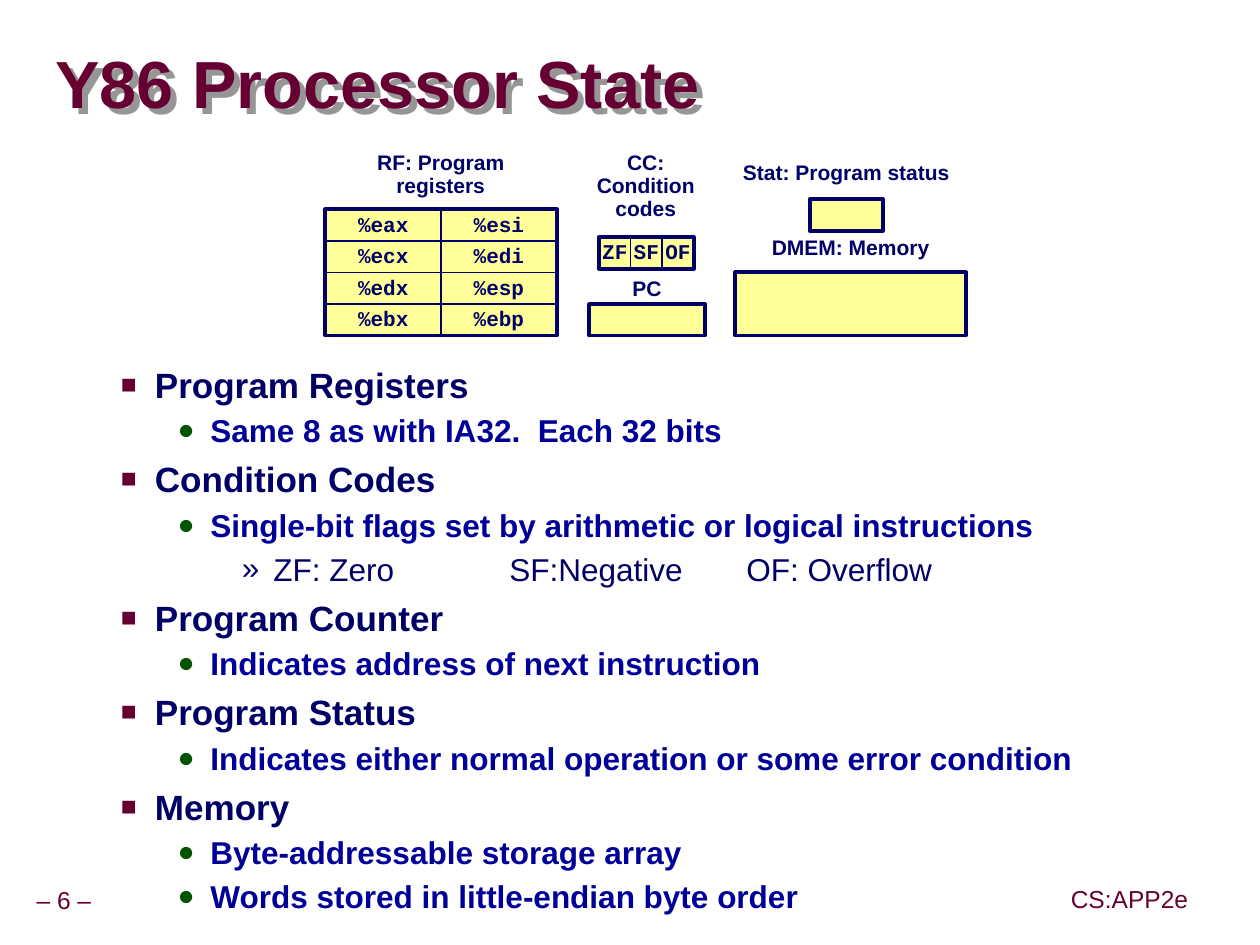
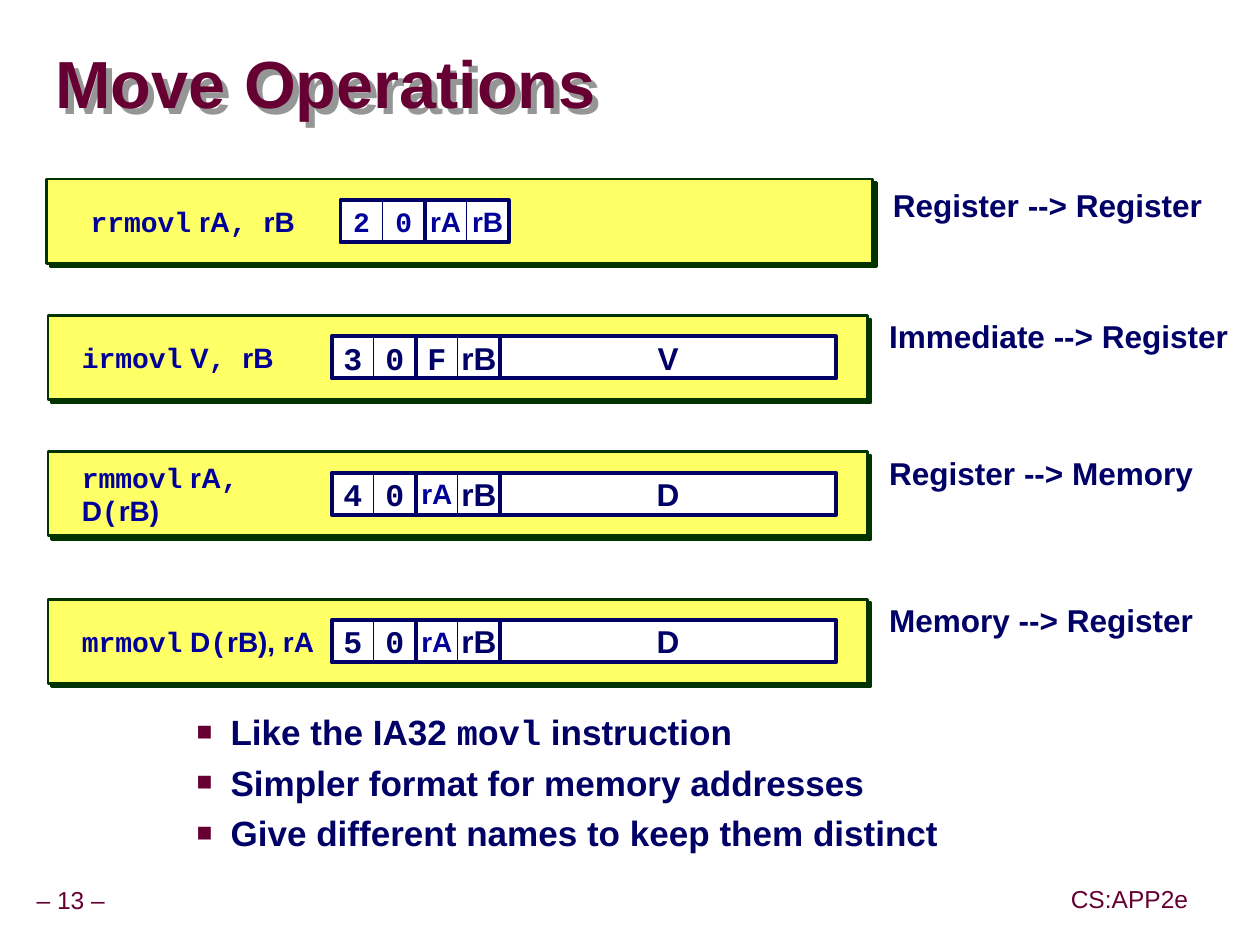
import pptx
import pptx.util
import pptx.dml.color
import pptx.enum.shapes
import pptx.enum.text
import pptx.oxml
import pptx.oxml.ns

Inches, Pt = pptx.util.Inches, pptx.util.Pt
ALIGN, ANCHOR = pptx.enum.text.PP_ALIGN, pptx.enum.text.MSO_ANCHOR

COLORS = {
    "maroon": "660033", "navy": "000066", "blue": "000099", "green": "005400",
    "dark_green": "003300", "pale_yellow": "FFFF99", "yellow": "FFFF66",
    "white": "FFFFFF", "gray": "969696",
}
SANS, MONO = "Arial", "Courier New"
WIDTH, HEIGHT = 9.99, 7.49
FOOTER = "CS:APP2e"

# Size, colour, bold, indent, hanging, line spacing, space before (%), bullet, bullet colour, bullet size (%)
LEVELS = {
    1: (20, "navy", True, 0.81, 0.27, None, 25, "■", "maroon", 75),
    2: (18, "blue", True, 1.25, 0.26, 1.07, 10, "●", "green", 90),
    3: (18, "navy", False, 1.75, 0.25, None, 20, "»", "navy", 100),
}

STATE_TITLE = "Y86 Processor State"
STATE_BULLETS = [
    (1, "Program Registers"),
    (2, "Same 8 as with IA32.  Each 32 bits"),
    (1, "Condition Codes"),
    (2, "Single-bit flags set by arithmetic or logical instructions"),
    (3, "ZF: Zero\tSF:Negative\t\tOF: Overflow"),
    (1, "Program Counter"),
    (2, "Indicates address of next instruction"),
    (1, "Program Status"),
    (2, "Indicates either normal operation or some error condition"),
    (1, "Memory"),
    (2, "Byte-addressable storage array"),
    (2, "Words stored in little-endian byte order"),
]
STATE_TABS = (3.62, 5.06)
REGISTERS = [("%eax", "%esi"), ("%ecx", "%edi"), ("%edx", "%esp"), ("%ebx", "%ebp")]
FLAGS = [("ZF", "SF", "OF")]
STATE_LABELS = [
    ("RF: Program registers", (2.58, 1.16, 1.83, 0.5)),
    ("CC: Condition codes", (4.58, 1.16, 1.08, 0.65)),
    ("PC", (4.67, 2.16, 0.92, 0.3)),
    ("DMEM: Memory", (5.83, 1.83, 1.83, 0.3)),
    ("Stat: Program status", (5.67, 1.24, 2.08, 0.3)),
]
STORAGE_BOXES = [(4.67, 2.41, 0.92, 0.25), (5.83, 2.16, 1.83, 0.5), (6.42, 1.58, 0.58, 0.25)]

MOVE_TITLE = "Move Operations"
MOVE_BULLETS = [
    (1, [("Like the IA32 ", SANS), ("movl", MONO), (" instruction", SANS)]),
    (1, "Simpler format for memory addresses"),
    (1, "Give different names to keep them distinct"),
]
# Top, instruction runs, byte fields, constant, caption
MOVES = [
    (1.42, [("rrmovl", MONO), (" rA", SANS), (", ", MONO), ("rB", SANS)],
     ("2", "0", "rA", "rB"), None, "Register --> Register"),
    (2.5, [("irmovl", MONO), (" V", SANS), (", ", MONO), ("rB", SANS)],
     ("3", "0", "F", "rB"), "V", "Immediate --> Register"),
    (3.58, [("rmmovl", MONO), (" rA", SANS), (",", MONO), (" D", SANS), ("(", MONO), ("rB)", SANS)],
     ("4", "0", "rA", "rB"), "D", "Register --> Memory"),
    (4.75, [("mrmovl", MONO), (" D", SANS), ("(", MONO), ("rB), rA", SANS)],
     ("5", "0", "rA", "rB"), "D", "Memory --> Register"),
]
FIELD = 1 / 3


def rgb(name):
    return pptx.dml.color.RGBColor.from_string(COLORS[name])


def add_element(parent, xml):
    namespace = pptx.oxml.ns.nsdecls("a")
    parent.append(pptx.oxml.parse_xml(xml.replace(" ", f" {namespace} ", 1)))


def add_runs(paragraph, content, size, color, bold=True, font=SANS):
    """Content is a string, or a list of (text, font) pairs."""
    for text, face in [(content, font)] if isinstance(content, str) else content:
        run = paragraph.add_run()
        run.text = text
        run.font.name, run.font.size, run.font.bold = face, Pt(size), bold
        run.font.color.rgb = rgb(color)


def prepare_frame(shape, anchor, wrap, inset):
    frame = shape.text_frame
    frame.word_wrap, frame.vertical_anchor = wrap, anchor
    frame.margin_left = frame.margin_right = Inches(inset[0])
    frame.margin_top = frame.margin_bottom = Inches(inset[1])
    return frame


def write_line(shape, content, size, color, bold=True, font=SANS, align=ALIGN.LEFT,
               anchor=ANCHOR.MIDDLE, wrap=False, inset=(0.1, 0.05), spacing=None):
    paragraph = prepare_frame(shape, anchor, wrap, inset).paragraphs[0]
    paragraph.alignment = align
    if spacing:
        paragraph.line_spacing = spacing
    add_runs(paragraph, content, size, color, bold, font)


def add_text(slide, box, content, size, color, **style):
    shape = slide.shapes.add_textbox(*map(Inches, box))
    write_line(shape, content, size, color, **style)
    return shape


def add_box(slide, box, fill=None, line="navy", weight=2.25):
    shape = slide.shapes.add_shape(pptx.enum.shapes.MSO_SHAPE.RECTANGLE, *map(Inches, box))
    shape.shadow.inherit = False
    if fill:
        shape.fill.solid()
        shape.fill.fore_color.rgb = rgb(fill)
    else:
        shape.fill.background()
    shape.line.color.rgb = rgb(line)
    shape.line.width = Pt(weight)
    return shape


def add_shadow(shape, color, distance):
    shape.shadow.inherit = False
    effects = shape._element.spPr.find(pptx.oxml.ns.qn("a:effectLst"))
    add_element(effects, f'<a:outerShdw dist="{Pt(distance)}" dir="2700000" algn="ctr" rotWithShape="0">'
                         f'<a:srgbClr val="{COLORS[color]}"/></a:outerShdw>')


def add_bullets(slide, box, items, tabs=()):
    shape = slide.shapes.add_textbox(*map(Inches, box))
    frame = prepare_frame(shape, ANCHOR.TOP, True, (0.1, 0.05))
    for index, (level, content) in enumerate(items):
        size, color, bold, indent, hanging, spacing, before, bullet, bullet_color, bullet_size = LEVELS[level]
        paragraph = frame.add_paragraph() if index else frame.paragraphs[0]
        paragraph.level = level - 1
        if spacing:
            paragraph.line_spacing = spacing
        properties = paragraph._p.get_or_add_pPr()
        properties.set("marL", str(Inches(indent)))
        properties.set("indent", str(-Inches(hanging)))
        add_element(properties, f'<a:spcBef ><a:spcPct val="{before * 1000}"/></a:spcBef>')
        add_element(properties, f'<a:buClr ><a:srgbClr val="{COLORS[bullet_color]}"/></a:buClr>')
        add_element(properties, f'<a:buSzPct val="{bullet_size * 1000}"/>')
        add_element(properties, f'<a:buFont typeface="{SANS}"/>')
        add_element(properties, f'<a:buChar char="{bullet}"/>')
        if tabs:
            stops = "".join(f'<a:tab pos="{Inches(tab)}" algn="l"/>' for tab in tabs)
            add_element(properties, f"<a:tabLst >{stops}</a:tabLst>")
        add_runs(paragraph, content, size, color, bold)


def start_slide(presentation, title, number):
    slide = presentation.slides.add_slide(presentation.slide_layouts[6])
    for box, text in [((0.24, 6.99, 0.8, 0.31), f"– {number} –"), ((8.44, 6.98, 1.04, 0.31), FOOTER)]:
        add_text(slide, box, text, 14, "maroon", bold=False, inset=(0.05, 0.05), spacing=0.9)
    heading = add_text(slide, (0.44, 0.27, 9.52, 0.85), title, 38, "maroon",
                       wrap=True, inset=(0, 0), spacing=0.87)
    add_shadow(heading, "gray", 4.8)
    return slide


def add_register_grid(slide, left, top, cell_width, cell_height, rows):
    add_box(slide, (left, top, cell_width * len(rows[0]), cell_height * len(rows)), "pale_yellow")
    for row, names in enumerate(rows):
        for column, name in enumerate(names):
            cell = add_box(slide, (left + column * cell_width, top + row * cell_height,
                                   cell_width, cell_height), weight=1)
            write_line(cell, name, 12, "navy", font=MONO, align=ALIGN.CENTER, spacing=0.9)


def build_state_slide(presentation):
    slide = start_slide(presentation, STATE_TITLE, 6)
    add_register_grid(slide, 2.58, 1.66, 0.917, 0.25, REGISTERS)
    add_register_grid(slide, 4.75, 1.88, 0.25, 0.25, FLAGS)
    add_bullets(slide, (0.32, 2.83, 9.07, 4.2), STATE_BULLETS, STATE_TABS)
    for box in STORAGE_BOXES:
        add_box(slide, box, "pale_yellow")
    for text, box in STATE_LABELS:
        add_text(slide, box, text, 12, "navy", align=ALIGN.CENTER,
                 anchor=ANCHOR.TOP, wrap=True, spacing=0.9)


def add_move(slide, top, instruction, fields, constant, caption):
    short = constant is None
    band_left, band_width, text_left, caption_left, caption_drop = (
        (0.37, 6.55, 0.62, 7.03, 0.04) if short else (0.38, 6.5, 0.55, 7, 0))
    band = add_box(slide, (band_left, top, band_width, 2 * FIELD), "yellow", "dark_green", 1.5)
    add_shadow(band, "dark_green", 2.8)
    add_text(slide, (caption_left, top + caption_drop, 2.79, 0.37), caption, 18, "navy",
             anchor=ANCHOR.TOP, inset=(0.05, 0.05), spacing=0.9)

    field_top = top + FIELD / 2
    field_left = text_left + 2.08
    add_text(slide, (text_left, field_top, 2.08, FIELD), instruction, 16, "blue")
    for index, name in enumerate(fields):
        cell = add_box(slide, (field_left + index * FIELD, field_top, FIELD, FIELD), "white", weight=0.5)
        size, color = (16, "blue") if short or name == "rA" else (18, "navy")
        write_line(cell, name, size, color, font=SANS if name in ("rA", "rB") else MONO, align=ALIGN.CENTER)
        if index % 2:
            add_box(slide, (field_left + (index - 1) * FIELD, field_top, 2 * FIELD, FIELD))
    if constant:
        cell = add_box(slide, (field_left + 4 * FIELD, field_top, 8 * FIELD, FIELD), "white")
        write_line(cell, constant, 18, "navy", align=ALIGN.CENTER)


def build_move_slide(presentation):
    slide = start_slide(presentation, MOVE_TITLE, 13)
    add_bullets(slide, (0.92, 5.58, 8.42, 1.7), MOVE_BULLETS)
    for move in MOVES:
        add_move(slide, *move)


def main():
    presentation = pptx.Presentation()
    presentation.slide_width, presentation.slide_height = Inches(WIDTH), Inches(HEIGHT)
    build_state_slide(presentation)
    build_move_slide(presentation)
    presentation.save("out.pptx")


if __name__ == "__main__":
    main()
